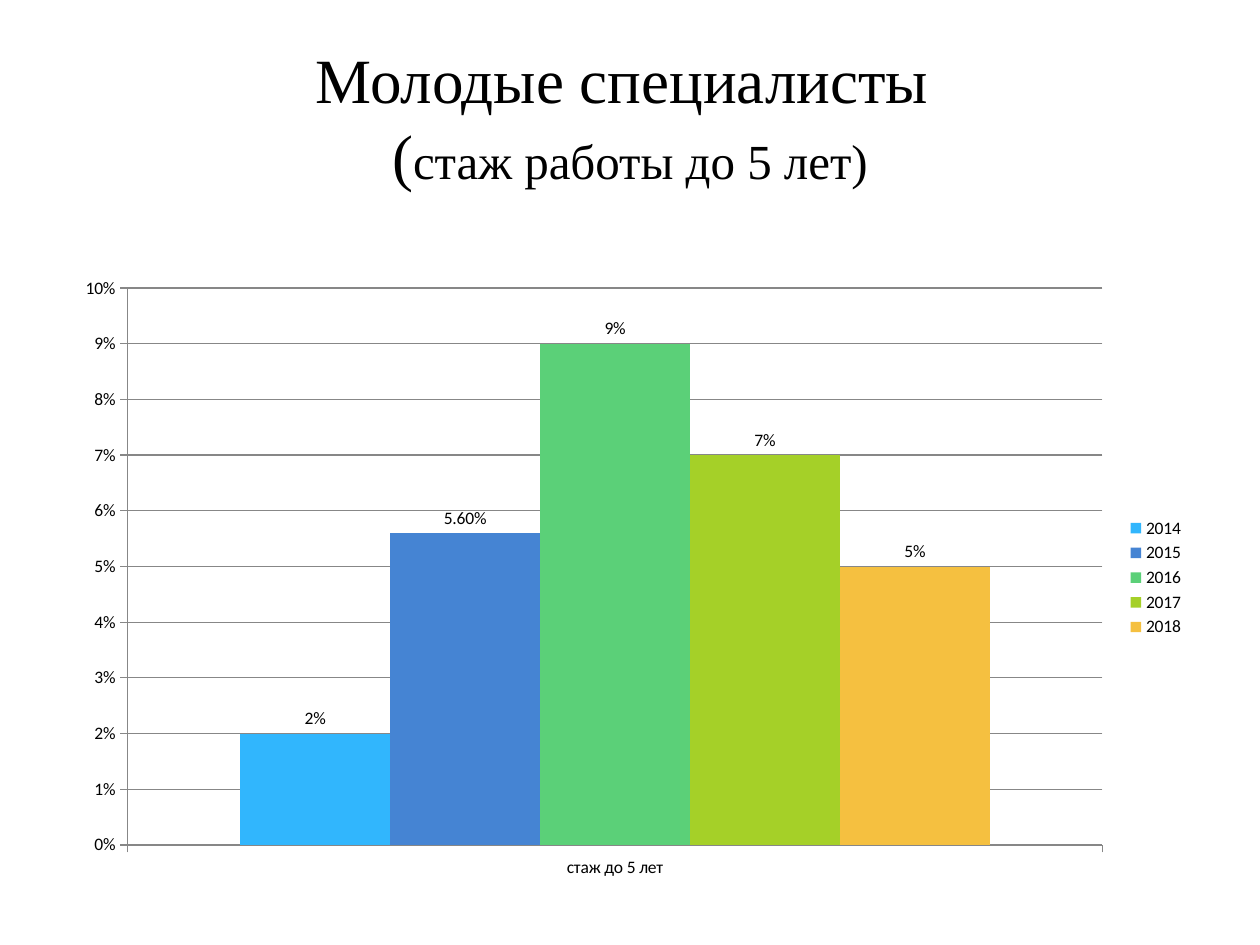
from typing import NamedTuple

from pptx import Presentation
from pptx.chart.data import CategoryChartData
from pptx.dml.color import RGBColor
from pptx.enum.chart import XL_CHART_TYPE, XL_LABEL_POSITION, XL_LEGEND_POSITION, XL_TICK_MARK
from pptx.enum.text import MSO_ANCHOR, PP_ALIGN
from pptx.util import Inches, Pt

COLUMNS = XL_CHART_TYPE.COLUMN_CLUSTERED
OUTSIDE_END = XL_LABEL_POSITION.OUTSIDE_END
LEGEND_RIGHT = XL_LEGEND_POSITION.RIGHT
TICK_OUTSIDE = XL_TICK_MARK.OUTSIDE
MIDDLE = MSO_ANCHOR.MIDDLE
CENTER = PP_ALIGN.CENTER

COLORS = {
    "text": "000000",
    "axis": "878787",
    "2014": "31B6FD",
    "2015": "4584D3",
    "2016": "5BD078",
    "2017": "A5D028",
    "2018": "F5C040",
}


class YearShare(NamedTuple):
    year: str
    share: float
    label_format: str = "0%"


SHARES = [
    YearShare("2014", 0.02),
    YearShare("2015", 0.056, "0.00%"),
    YearShare("2016", 0.09),
    YearShare("2017", 0.07),
    YearShare("2018", 0.05),
]


def color(name: str) -> RGBColor:
    return RGBColor.from_string(COLORS[name])


def style_font(font, face: str, size: float) -> None:
    font.name = face
    font.size = Pt(size)
    font.color.rgb = color("text")


def write_title(slide) -> None:
    title = slide.shapes.title
    title.left, title.top = Inches(0.5), Inches(0.3)
    title.width, title.height = Inches(9), Inches(1.25)
    title.text_frame.vertical_anchor = MIDDLE
    heading = title.text_frame.paragraphs[0]
    heading.text = "Молодые специалисты \v("
    heading.alignment = CENTER
    heading.add_run().text = "стаж работы до 5 лет)"
    for run, size in zip(heading.runs, (36, 36, 28)):
        style_font(run.font, "Times New Roman", size)


def style_axis(axis) -> None:
    axis.major_tick_mark = TICK_OUTSIDE
    axis.format.line.color.rgb = color("axis")
    axis.format.line.width = Pt(0.75)


def draw_shares(slide) -> None:
    data = CategoryChartData(number_format="0%")
    data.categories = ["стаж до 5 лет"]
    for item in SHARES:
        data.add_series(item.year, [item.share], item.label_format)
    chart = slide.shapes.add_chart(
        COLUMNS, Inches(0.5), Inches(2.11), Inches(9), Inches(4.95), data
    ).chart
    style_font(chart.font, "Calibri", 10)
    chart.has_title = False
    chart.has_legend = True
    chart.legend.position = LEGEND_RIGHT
    chart.legend.include_in_layout = False

    style_axis(chart.category_axis)
    share_axis = chart.value_axis
    style_axis(share_axis)
    share_axis.minimum_scale, share_axis.maximum_scale = 0, 0.1
    share_axis.major_unit = 0.01
    share_axis.tick_labels.number_format = "0%"
    share_axis.tick_labels.number_format_is_linked = False
    share_axis.major_gridlines.format.line.color.rgb = color("axis")
    share_axis.major_gridlines.format.line.width = Pt(0.75)

    columns = chart.plots[0]
    columns.gap_width = 150
    columns.overlap = 0
    columns.vary_by_categories = False
    for item, series in zip(SHARES, columns.series):
        series.format.fill.solid()
        series.format.fill.fore_color.rgb = color(item.year)
        labels = series.data_labels
        labels.show_value = True
        labels.position = OUTSIDE_END
        labels.number_format = item.label_format
        labels.number_format_is_linked = False


def main() -> None:
    """Build the slide on the share of young specialists by year."""
    deck = Presentation()
    deck.slide_width, deck.slide_height = Inches(10), Inches(7.5)
    slide = deck.slides.add_slide(deck.slide_layouts[5])
    write_title(slide)
    draw_shares(slide)
    deck.save("out.pptx")


if __name__ == "__main__":
    main()
